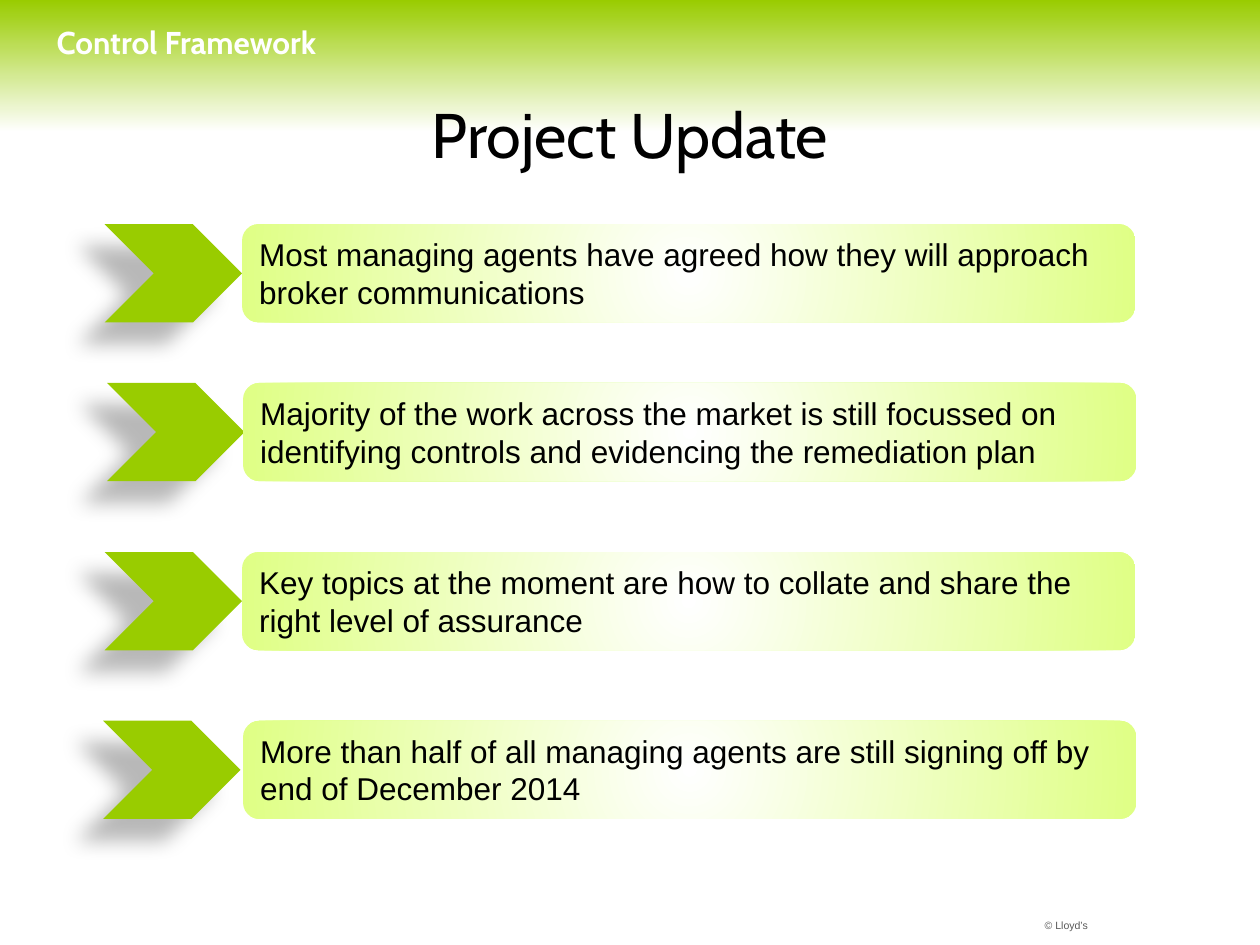
from lxml import etree
from pptx import Presentation
from pptx import util as u
from pptx.dml.color import RGBColor
from pptx.enum import shapes, text
from pptx.oxml import parse_xml
from pptx.oxml.ns import nsdecls, qn

GREEN = RGBColor(0x99, 0xCC, 0x00)
PALE_GREEN = RGBColor(0xDF, 0xFF, 0x85)
WHITE = RGBColor(0xFF, 0xFF, 0xFF)
BLACK = RGBColor(0x00, 0x00, 0x00)
GREY = RGBColor(0x59, 0x59, 0x59)

LINEAR_DOWN = '<a:lin ang="5400000" scaled="0"/>'
FROM_CENTRE = ('<a:path path="circle"><a:fillToRect l="50000" t="50000" '
               'r="50000" b="50000"/></a:path>')

# chevron left, bar left, top (cm), wording
ROWS = [
    (2.11, 4.88, 4.52, "Most managing agents have agreed how they will approach "
                       "broker communications"),
    (2.16, 4.9, 7.72, "Majority of the work across the market is still focussed on "
                      "identifying controls and evidencing the remediation plan"),
    (2.11, 4.88, 11.13, "Key topics at the moment are how to collate and share the "
                        "right level of assurance"),
    (2.08, 4.9, 14.53, "More than half of all managing agents are still signing off by "
                       "end of December 2014"),
]
ROW_H = u.Cm(1.98)


def set_gradient(owner, fill, stops, direction):
    """Fill with (percent, colour) stops; owner is the element holding the fill."""
    fill.solid()
    gs = "".join(f'<a:gs pos="{pos * 1000}"><a:srgbClr val="{color}"/></a:gs>'
                 for pos, color in stops)
    solid = owner.find(".//" + qn("a:solidFill"))
    solid.getparent().replace(solid, parse_xml(
        f'<a:gradFill {nsdecls("a")} rotWithShape="1"><a:gsLst>{gs}</a:gsLst>'
        f'{direction}</a:gradFill>'))


def write(tf, wording, size, font, color, align=text.PP_ALIGN.LEFT, bold=False):
    tf.text = wording
    p = tf.paragraphs[0]
    p.alignment = align
    f = p.runs[0].font
    f.size, f.name, f.bold = u.Pt(size), font, bold
    f.color.rgb = color


prs = Presentation()
prs.slide_width, prs.slide_height = u.Cm(25.4), u.Cm(19.05)
s = prs.slides.add_slide(prs.slide_layouts[5])
set_gradient(s._element, s.background.fill,
             [(0, GREEN), (14, WHITE), (100, WHITE)], LINEAR_DOWN)

# Title
title = s.shapes.title
title.left, title.top, title.width, title.height = (
    u.Cm(1.5), u.Cm(2.13), u.Cm(22.4), u.Cm(1.4))
tf = title.text_frame
tf.margin_left = tf.margin_right = tf.margin_bottom = 0
tf.margin_top = u.Cm(0.1)
tf.vertical_anchor = text.MSO_ANCHOR.TOP
tf.auto_size = text.MSO_AUTO_SIZE.NONE
write(tf, "Project Update", 36, "Cabin", BLACK, text.PP_ALIGN.CENTER)
tf.paragraphs[0].line_spacing = 0.8

# Section name and copyright line
section = s.shapes.add_textbox(u.Cm(0.89), u.Cm(0.33), u.Cm(7.42), u.Cm(1.02))
tf = section.text_frame
tf.word_wrap = False
tf.vertical_anchor = text.MSO_ANCHOR.MIDDLE
write(tf, "Control Framework", 18, "Cabin", WHITE, bold=True)

footer = s.shapes.add_textbox(u.Cm(19), u.Cm(18.52), u.Cm(2.93), u.Cm(0.33))
tf = footer.text_frame
tf.word_wrap = True
tf.margin_left = tf.margin_top = tf.margin_right = tf.margin_bottom = 0
write(tf, "© Lloyd’s", 6, "Arial", GREY, text.PP_ALIGN.RIGHT)

# Chevron and bar for each point
for chevron_left, bar_left, top, wording in ROWS:
    chevron = s.shapes.add_shape(shapes.MSO_SHAPE.CHEVRON, u.Cm(chevron_left),
                                 u.Cm(top), u.Cm(2.77), ROW_H)
    chevron.fill.solid()
    chevron.fill.fore_color.rgb = GREEN
    chevron.line.fill.background()
    chevron.shadow.inherit = False
    effects = chevron._element.spPr.find(qn("a:effectLst"))
    shadow = etree.SubElement(effects, qn("a:outerShdw"), blurRad="150000",
                              dist="250000", dir="8460000", algn="ctr",
                              rotWithShape="0")
    color = etree.SubElement(shadow, qn("a:srgbClr"), val=str(BLACK))
    etree.SubElement(color, qn("a:alpha"), val="28000")

    bar = s.shapes.add_shape(shapes.MSO_SHAPE.ROUNDED_RECTANGLE, u.Cm(bar_left),
                             u.Cm(top), u.Cm(18.01), ROW_H)
    set_gradient(bar._element.spPr, bar.fill,
                 [(0, WHITE), (100, PALE_GREEN)], FROM_CENTRE)
    bar.line.fill.background()
    bar.shadow.inherit = False
    bar.text_frame.word_wrap = True
    bar.text_frame.vertical_anchor = text.MSO_ANCHOR.TOP
    write(bar.text_frame, wording, 18, "Arial", BLACK)

prs.save("out.pptx")
